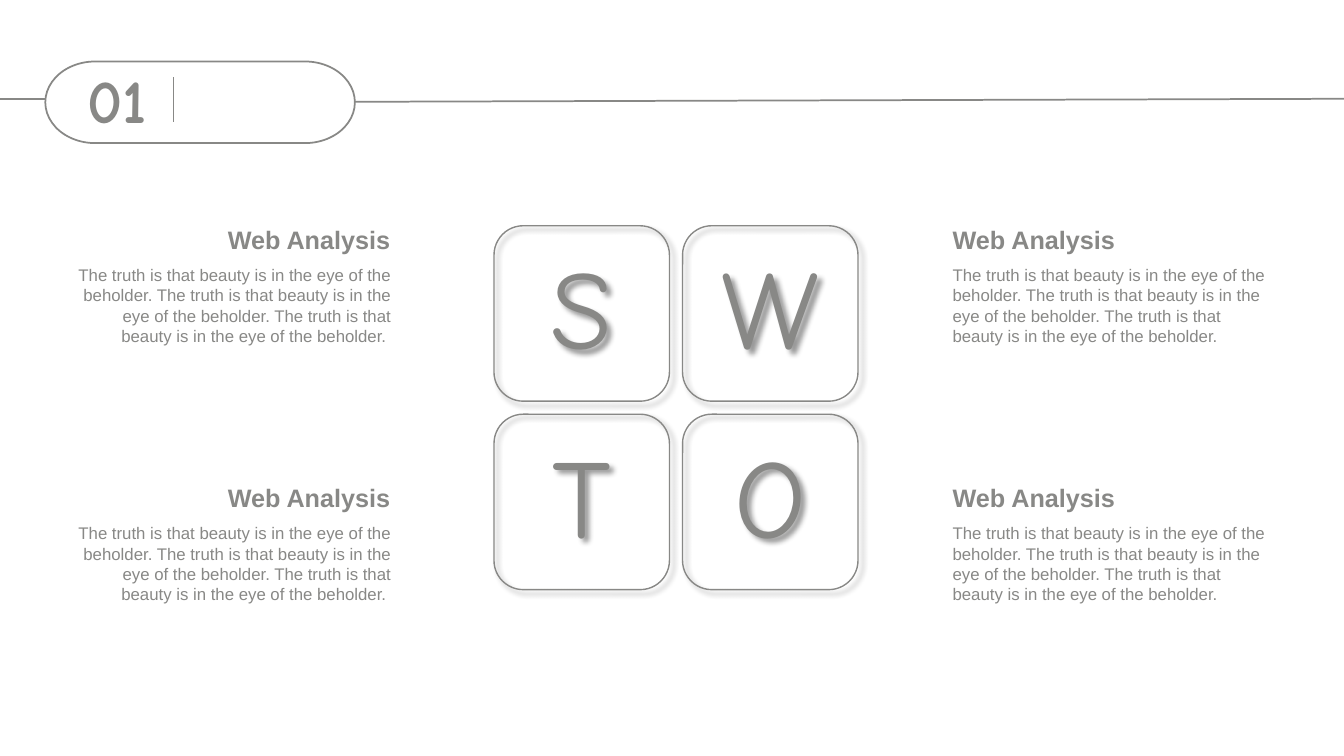
from dataclasses import dataclass
from itertools import product

from lxml.etree import SubElement as Sub
from pptx import Presentation
from pptx.dml.color import RGBColor as Color
from pptx.enum.shapes import MSO_CONNECTOR as Link, MSO_SHAPE as Form
from pptx.enum.text import MSO_ANCHOR as Anchor, MSO_AUTO_SIZE as Fit, PP_ALIGN as Align
from pptx.oxml.ns import qn
from pptx.util import Inches, Pt


@dataclass(frozen=True)
class Theme:
    ink: Color = Color(0x88, 0x88, 0x86)
    shade: str = "000000"
    sans: str = "Arial"
    hand: str = "Comic Neue"
    body: int = 12
    head: int = 18
    number: int = 44
    letter: int = 80


THEME = Theme()
CARD = 1.74
STEP = 1.87
TRUTH = " ".join(["The truth is that beauty is in the eye of the beholder."] * 3)


def write(shape, text, size, font=THEME.sans, bold=False, align=Align.LEFT,
          anchor=Anchor.TOP, wrap=True, fit=Fit.SHAPE_TO_FIT_TEXT, inset=None, space=None):
    frame = shape.text_frame
    frame.word_wrap = wrap
    frame.auto_size = fit
    frame.vertical_anchor = anchor
    if inset is not None:
        frame.margin_left = frame.margin_right = Inches(inset)
        frame.margin_top = frame.margin_bottom = Inches(inset)
    par = frame.paragraphs[0]
    par.alignment = align
    par.line_spacing = space
    run = par.add_run()
    run.text = text
    run.font.size = Pt(size)
    run.font.name = font
    run.font.bold = bold
    run.font.color.rgb = THEME.ink


def add_box(slide, left, top, width, height, text, **style):
    box = slide.shapes.add_textbox(*map(Inches, (left, top, width, height)))
    write(box, text, **style)


def add_line(slide, *ends):
    line = slide.shapes.add_connector(Link.STRAIGHT, *map(Inches, ends))
    line.line.color.rgb = THEME.ink
    line.line.width = Pt(1.25)
    Sub(line._element.spPr, qn("a:effectLst"))


def add_frame(slide, form, left, top, width, height, weight):
    shape = slide.shapes.add_shape(form, *map(Inches, (left, top, width, height)))
    shape.shadow.inherit = False
    shape.fill.background()
    shape.line.color.rgb = THEME.ink
    shape.line.width = Pt(weight)
    return shape


def add_shadow(shape):
    effects = shape._element.spPr.find(qn("a:effectLst"))
    shadow = Sub(effects, qn("a:outerShdw"), blurRad=str(Pt(4)), dist=str(Pt(4)),
                 dir="2700000", algn="tl", rotWithShape="0")
    tint = Sub(shadow, qn("a:srgbClr"), val=THEME.shade)
    Sub(tint, qn("a:alpha"), val="40000")


def add_card(slide, left, top, letter):
    card = add_frame(slide, Form.ROUNDED_RECTANGLE, left, top, CARD, CARD, 1)
    add_shadow(card)
    write(card, letter, size=THEME.letter, font=THEME.hand, align=Align.CENTER,
          anchor=Anchor.MIDDLE, fit=Fit.NONE, inset=0.25, space=0.9)


def add_note(slide, left, top, align):
    right = align == Align.RIGHT
    shift = 1.52 if right else 0
    add_box(slide, left, top + 0.4, 3.36, 0.91, TRUTH + " " * right,
            size=THEME.body, align=align)
    add_box(slide, left + shift, top, 1.83, 0.4, "Web Analysis",
            size=THEME.head, bold=True, align=align, wrap=False)


def add_header(slide):
    add_line(slide, 3.52, 1.01, 13.33, 0.98)
    add_frame(slide, Form.FLOWCHART_TERMINATOR, 0.45, 0.61, 3.07, 0.81, 1.25)
    add_line(slide, 0, 0.98, 0.45, 0.98)
    add_line(slide, 1.72, 1.21, 1.72, 0.76)
    title = slide.shapes.title
    title.left, title.top = Inches(0.77), Inches(0.56)
    title.width, title.height = Inches(0.92), Inches(0.84)
    write(title, "01", size=THEME.number, font=THEME.hand, bold=True)


def main():
    deck = Presentation()
    deck.slide_width, deck.slide_height = Inches(13.33), Inches(7.5)
    slide = deck.slides.add_slide(deck.slide_layouts[5])
    add_header(slide)
    for letter, (row, col) in zip("SWTO", product(range(2), repeat=2)):
        add_card(slide, 4.9 + col * STEP, 2.24 + row * STEP, letter)
    sides = ((0.62, Align.RIGHT), (9.35, Align.LEFT))
    for (left, align), top in product(sides, (2.18, 4.74)):
        add_note(slide, left, top, align)
    deck.save("out.pptx")


if __name__ == "__main__":
    main()
